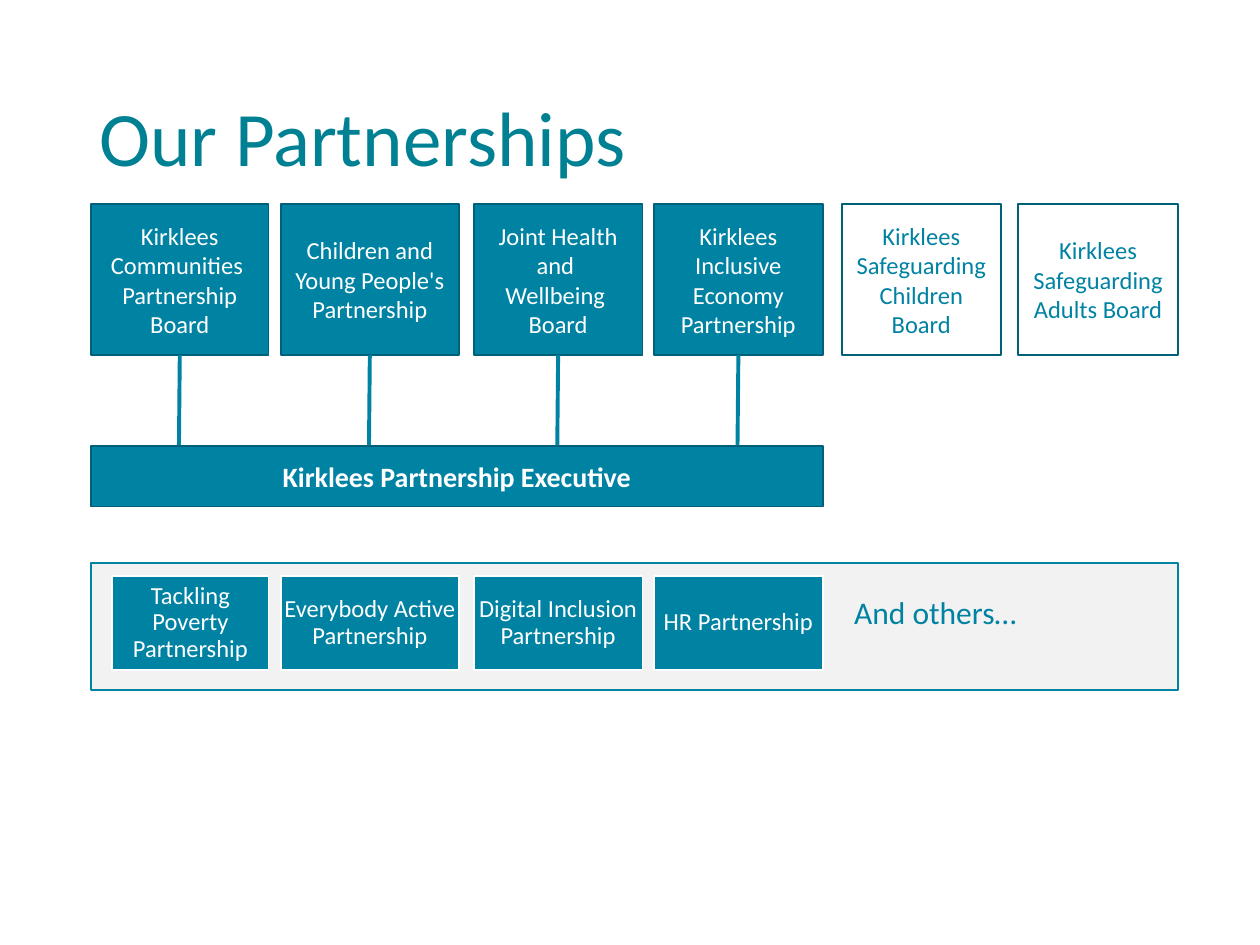
from lxml.etree import SubElement
from pptx import Presentation
from pptx.dml.color import RGBColor
from pptx.enum.shapes import MSO_CONNECTOR, MSO_SHAPE
from pptx.enum.text import MSO_ANCHOR, MSO_AUTO_SIZE, PP_ALIGN
from pptx.oxml.ns import qn
from pptx.util import Pt

TEAL = RGBColor(0x00, 0x82, 0xA3)
TITLE_TEAL = RGBColor(0x00, 0x80, 0x93)
DARK_TEAL = RGBColor(0x00, 0x60, 0x79)
PALE_GREY = RGBColor(0xF2, 0xF2, 0xF2)
WHITE = RGBColor(0xFF, 0xFF, 0xFF)

# Column positions: left, width
COLUMNS = [(52, 101.5), (160.6, 101.5), (270.7, 96.5),
           (373.7, 96.5), (481, 91), (581.8, 91.4)]
LEFT = COLUMNS[0][0]
EXECUTIVE_WIDTH = sum(COLUMNS[3]) - LEFT
FULL_WIDTH = sum(COLUMNS[5]) - LEFT

BOARD_TOP, BOARD_HEIGHT = 116.6, 86.4
EXECUTIVE_TOP, EXECUTIVE_HEIGHT = 254.9, 34.5
OTHERS_TOP, OTHERS_HEIGHT = 321.8, 72.7
GROUP_TOP, GROUP_HEIGHT = 329, 54

BOARDS = [
    "Kirklees Communities \nPartnership Board",
    "Children and Young People's Partnership",
    "Joint Health and \nWellbeing \vBoard",
    "Kirklees Inclusive Economy Partnership",
    "Kirklees Safeguarding Children Board",
    "Kirklees Safeguarding Adults Board",
]
GROUPS = ["Tackling Poverty Partnership", "Everybody Active Partnership",
          "Digital Inclusion Partnership", "HR Partnership"]
GROUP_INDENT = 12.2


def write_text(frame, text, size=14, color=WHITE, bold=False,
               align=PP_ALIGN.CENTER, spacing=None):
    """Fill a text frame and format every paragraph and span."""
    frame.text = text
    for para in frame.paragraphs:
        para.alignment = align
        if spacing:
            para.line_spacing = spacing
        for span in para.runs:
            span.font.name = "Calibri"
            span.font.size = Pt(size)
            span.font.bold = bold
            span.font.color.rgb = color


class PartnershipPage:
    def __init__(self, deck):
        self.page = deck.slides.add_slide(deck.slide_layouts[5])

    def title(self, text, left, top, width, height):
        box = self.page.shapes.title
        box.left, box.top = Pt(left), Pt(top)
        box.width, box.height = Pt(width), Pt(height)
        frame = box.text_frame
        frame.auto_size = MSO_AUTO_SIZE.NONE
        frame.vertical_anchor = MSO_ANCHOR.MIDDLE
        write_text(frame, text, size=44, color=TITLE_TEAL,
                   align=PP_ALIGN.LEFT, spacing=0.9)

    def box(self, left, top, width, height, text="", fill=TEAL,
            line=DARK_TEAL, inset=None, **text_format):
        box = self.page.shapes.add_shape(
            MSO_SHAPE.RECTANGLE, Pt(left), Pt(top), Pt(width), Pt(height))
        box.shadow.inherit = False
        if fill is None:
            box.fill.background()
        else:
            box.fill.solid()
            box.fill.fore_color.rgb = fill
        box.line.color.rgb = line
        box.line.width = Pt(1)
        if text:
            frame = box.text_frame
            frame.word_wrap = True
            frame.vertical_anchor = MSO_ANCHOR.MIDDLE
            if inset is not None:
                frame.margin_left = frame.margin_right = Pt(inset)
                frame.margin_top = frame.margin_bottom = Pt(inset)
            write_text(frame, text, **text_format)
        return box

    def label(self, text, left, top, width, height, **text_format):
        box = self.page.shapes.add_textbox(
            Pt(left), Pt(top), Pt(width), Pt(height))
        box.text_frame.word_wrap = False
        box.text_frame.auto_size = MSO_AUTO_SIZE.SHAPE_TO_FIT_TEXT
        write_text(box.text_frame, text, **text_format)

    def link_down(self, box, bottom):
        """Draw a line from the bottom of a box down to a given height."""
        middle = box.left + box.width // 2
        link = self.page.shapes.add_connector(
            MSO_CONNECTOR.STRAIGHT, middle, box.top + box.height,
            middle - Pt(0.5), Pt(bottom))
        link.begin_connect(box, 2)
        link.line.color.rgb = TEAL
        link.line.width = Pt(2.25)
        SubElement(link._element.spPr, qn("a:effectLst"))


def main():
    deck = Presentation()
    deck.slide_width, deck.slide_height = Pt(720), Pt(540)
    page = PartnershipPage(deck)
    page.title("Our Partnerships", 49.7, 28.8, 620.6, 104.4)

    # Boards: the first four report to the executive, the others stand alone
    for index, (text, (left, width)) in enumerate(zip(BOARDS, COLUMNS)):
        reports = index < 4
        board = page.box(left, BOARD_TOP, width, BOARD_HEIGHT, text,
                         fill=TEAL if reports else None,
                         color=WHITE if reports else TEAL)
        if reports:
            page.link_down(board, EXECUTIVE_TOP)

    # Executive bar
    page.box(LEFT, EXECUTIVE_TOP, EXECUTIVE_WIDTH, EXECUTIVE_HEIGHT,
             "Kirklees Partnership Executive", size=16, bold=True)

    # Panel of other partnerships
    page.box(LEFT, OTHERS_TOP, FULL_WIDTH, OTHERS_HEIGHT,
             fill=PALE_GREY, line=TEAL)
    for index, (text, (left, width)) in enumerate(zip(GROUPS, COLUMNS)):
        indent = GROUP_INDENT if index == 0 else 0
        page.box(left + indent, GROUP_TOP, width - indent, GROUP_HEIGHT, text,
                 line=WHITE, inset=0.7, spacing=0.9)
    page.label("And others…", COLUMNS[4][0], 335.5, 109.4, 29,
               size=18, color=TEAL, align=PP_ALIGN.LEFT)

    deck.save("out.pptx")


if __name__ == "__main__":
    main()
